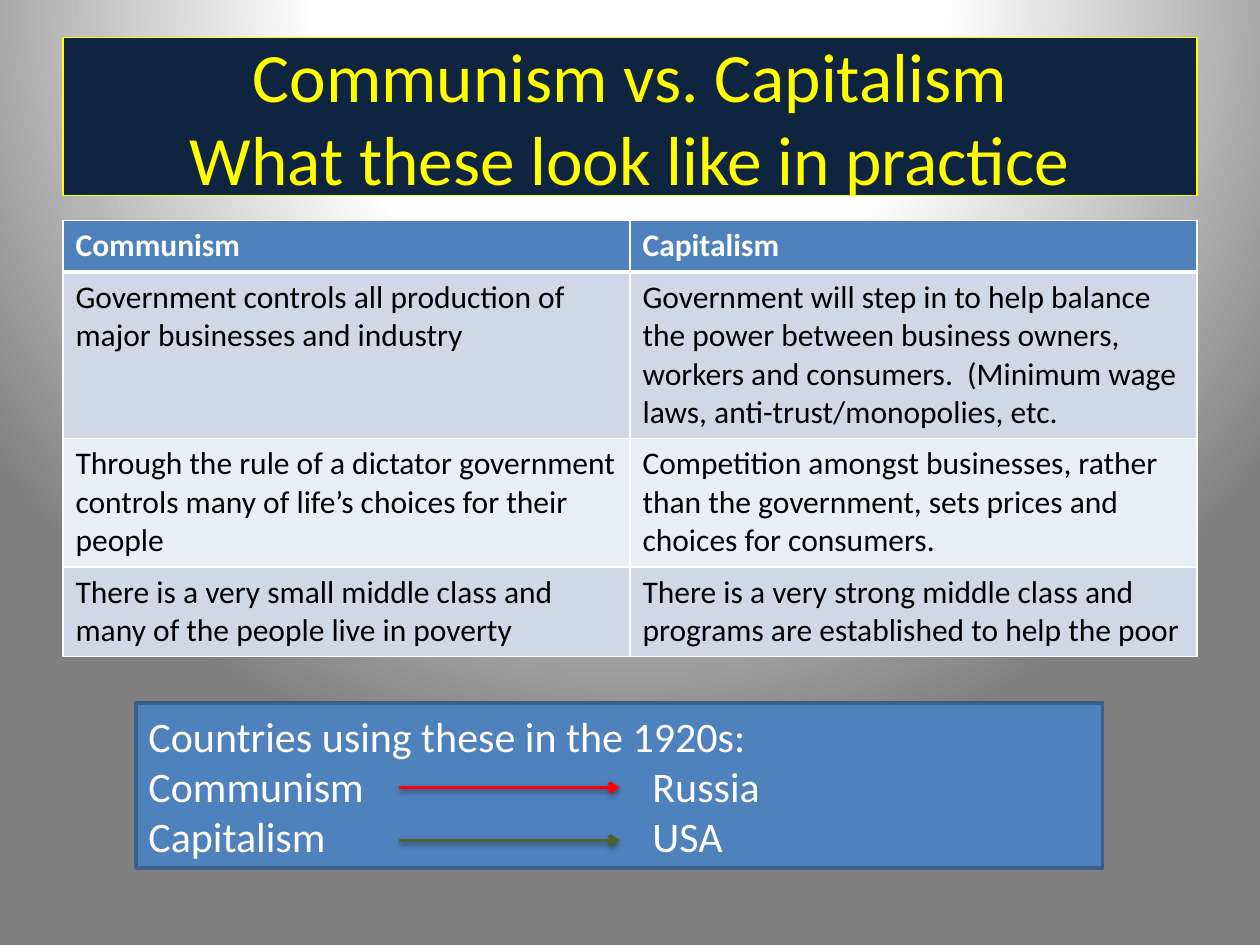
from dataclasses import dataclass

from lxml.etree import SubElement
from pptx import Presentation
from pptx.dml.color import RGBColor
from pptx.enum.shapes import MSO_CONNECTOR as Connector, MSO_SHAPE as Shape
from pptx.enum.text import MSO_ANCHOR as Anchor, PP_ALIGN as Align
from pptx.oxml import parse_xml
from pptx.oxml.ns import nsdecls, qn
from pptx.util import Inches, Pt

FONT = "Calibri"
COLORS = {
    "white": "FFFFFF", "black": "000000", "yellow": "FFFF00",
    "navy": "0F243E", "blue": "4F81BD", "edge": "3A5F8C",
    "band": "D0D8E8", "pale": "E9EDF4", "red": "FF0000", "olive": "4F6228",
}
BACKDROP = {0: "FFFFFF", 40: "FEFEFE", 100: "7F7F7F"}


@dataclass(frozen=True)
class TableRow:
    communism: str
    capitalism: str
    height: float
    fill: str
    color: str = "black"
    bold: bool = False
    top: int = 1
    bottom: int = 1


@dataclass(frozen=True)
class Panel:
    left: float
    top: float
    width: float
    height: float
    fill: str
    line: str
    line_width: float


@dataclass(frozen=True)
class Example:
    system: str
    country: str
    arrow_y: float
    color: str


ROWS = [
    TableRow("Communism", "Capitalism", 0.41, "blue", "white", True, bottom=3),
    TableRow(
        "Government controls all production of major businesses and industry",
        "Government will step in to help balance the power between business owners, "
        "workers and consumers.  (Minimum wage laws, anti-trust/monopolies, etc.",
        1.32, "band", top=3),
    TableRow(
        "Through the rule of a dictator government controls many of life’s choices "
        "for their people",
        "Competition amongst businesses, rather than the government, sets prices and "
        "choices for consumers.",
        1.02, "pale"),
    TableRow(
        "There is a very small middle class and many of the people live in poverty",
        "There is a very strong middle class and programs are established to help the poor",
        0.71, "band"),
]
EXAMPLES = [
    Example("Communism", "Russia", 6.25, "red"),
    Example("Capitalism", "USA", 6.67, "olive"),
]


def rgb(name: str) -> RGBColor:
    return RGBColor.from_string(COLORS[name])


def add_text(paragraph, text: str, size: float, color: str, bold: bool = False) -> None:
    run = paragraph.add_run()
    run.text = text
    run.font.name = FONT
    run.font.size = Pt(size)
    run.font.bold = bold
    run.font.color.rgb = rgb(color)


def paint_background(slide) -> None:
    stops = "".join(
        f'<a:gs pos="{place * 1000}"><a:srgbClr val="{color}"/></a:gs>'
        for place, color in BACKDROP.items())
    background = parse_xml(
        f'<p:bg {nsdecls("p", "a")}><p:bgPr><a:gradFill rotWithShape="1">'
        f'<a:gsLst>{stops}</a:gsLst><a:path path="circle">'
        '<a:fillToRect l="50000" t="-80000" r="50000" b="180000"/></a:path>'
        '</a:gradFill><a:effectLst/></p:bgPr></p:bg>')
    slide.element.cSld.insert(0, background)


def add_panel(slide, panel: Panel):
    box = slide.shapes.add_shape(
        Shape.RECTANGLE, Inches(panel.left), Inches(panel.top),
        Inches(panel.width), Inches(panel.height))
    box.shadow.inherit = False
    box.fill.solid()
    box.fill.fore_color.rgb = rgb(panel.fill)
    box.line.color.rgb = rgb(panel.line)
    box.line.width = Pt(panel.line_width)
    box.text_frame.word_wrap = True
    box.text_frame.vertical_anchor = Anchor.MIDDLE
    return box.text_frame


def add_title(slide) -> None:
    frame = add_panel(slide, Panel(0.5, 0.3, 9, 1.25, "navy", "yellow", 0.75))
    heading = frame.paragraphs[0]
    heading.alignment = Align.CENTER
    add_text(heading, "Communism vs. Capitalism", 39.6, "yellow")
    heading.add_line_break()
    add_text(heading, "What these look like in practice", 39.6, "yellow")


def set_borders(cell, row: TableRow) -> None:
    widths = {"lnL": 1, "lnR": 1, "lnT": row.top, "lnB": row.bottom}
    for index, (side, width) in enumerate(widths.items()):
        border = parse_xml(
            f'<a:{side} {nsdecls("a")} w="{Pt(width)}"><a:solidFill>'
            f'<a:srgbClr val="{COLORS["white"]}"/></a:solidFill></a:{side}>')
        cell._tc.get_or_add_tcPr().insert(index, border)


def add_comparison(slide) -> None:
    height = sum(row.height for row in ROWS)
    table = slide.shapes.add_table(
        len(ROWS), 2, Inches(0.5), Inches(1.75), Inches(9), Inches(height)).table
    for index, row in enumerate(ROWS):
        table.rows[index].height = Inches(row.height)
        for column, text in enumerate((row.communism, row.capitalism)):
            cell = table.cell(index, column)
            cell.fill.solid()
            cell.fill.fore_color.rgb = rgb(row.fill)
            set_borders(cell, row)
            add_text(cell.text_frame.paragraphs[0], text, 18, row.color, row.bold)


def add_arrow(slide, y: float, color: str) -> None:
    arrow = slide.shapes.add_connector(
        Connector.STRAIGHT, Inches(3.17), Inches(y), Inches(4.92), Inches(y))
    arrow.line.color.rgb = rgb(color)
    arrow.line.width = Pt(2)
    SubElement(arrow.line._get_or_add_ln(), qn("a:tailEnd"), type="arrow")
    arrow._element.spPr.append(parse_xml(
        f'<a:effectLst {nsdecls("a")}><a:outerShdw blurRad="{Pt(3.1)}" '
        f'dist="{Pt(1.6)}" dir="5400000" rotWithShape="0">'
        f'<a:srgbClr val="{COLORS["black"]}"><a:alpha val="38000"/></a:srgbClr>'
        '</a:outerShdw></a:effectLst>'))


def add_examples(slide) -> None:
    frame = add_panel(slide, Panel(1.08, 5.58, 7.67, 1.31, "blue", "edge", 2))
    intro = frame.paragraphs[0]
    intro.alignment = Align.LEFT
    add_text(intro, "Countries using these in the 1920s:", 24, "white")
    for example in EXAMPLES:
        entry = frame.add_paragraph()
        entry.alignment = Align.LEFT
        stops = SubElement(entry._p.get_or_add_pPr(), qn("a:tabLst"))
        SubElement(stops, qn("a:tab"), pos=str(Inches(4)), algn="l")
        add_text(entry, f"{example.system}\t{example.country}", 24, "white")
        add_arrow(slide, example.arrow_y, example.color)


def main() -> None:
    """Build the slide comparing communism and capitalism in practice."""
    deck = Presentation()
    deck.slide_width, deck.slide_height = Inches(10), Inches(7.5)
    slide = deck.slides.add_slide(deck.slide_layouts[6])
    paint_background(slide)
    add_title(slide)
    add_comparison(slide)
    add_examples(slide)
    deck.save("out.pptx")


if __name__ == "__main__":
    main()
